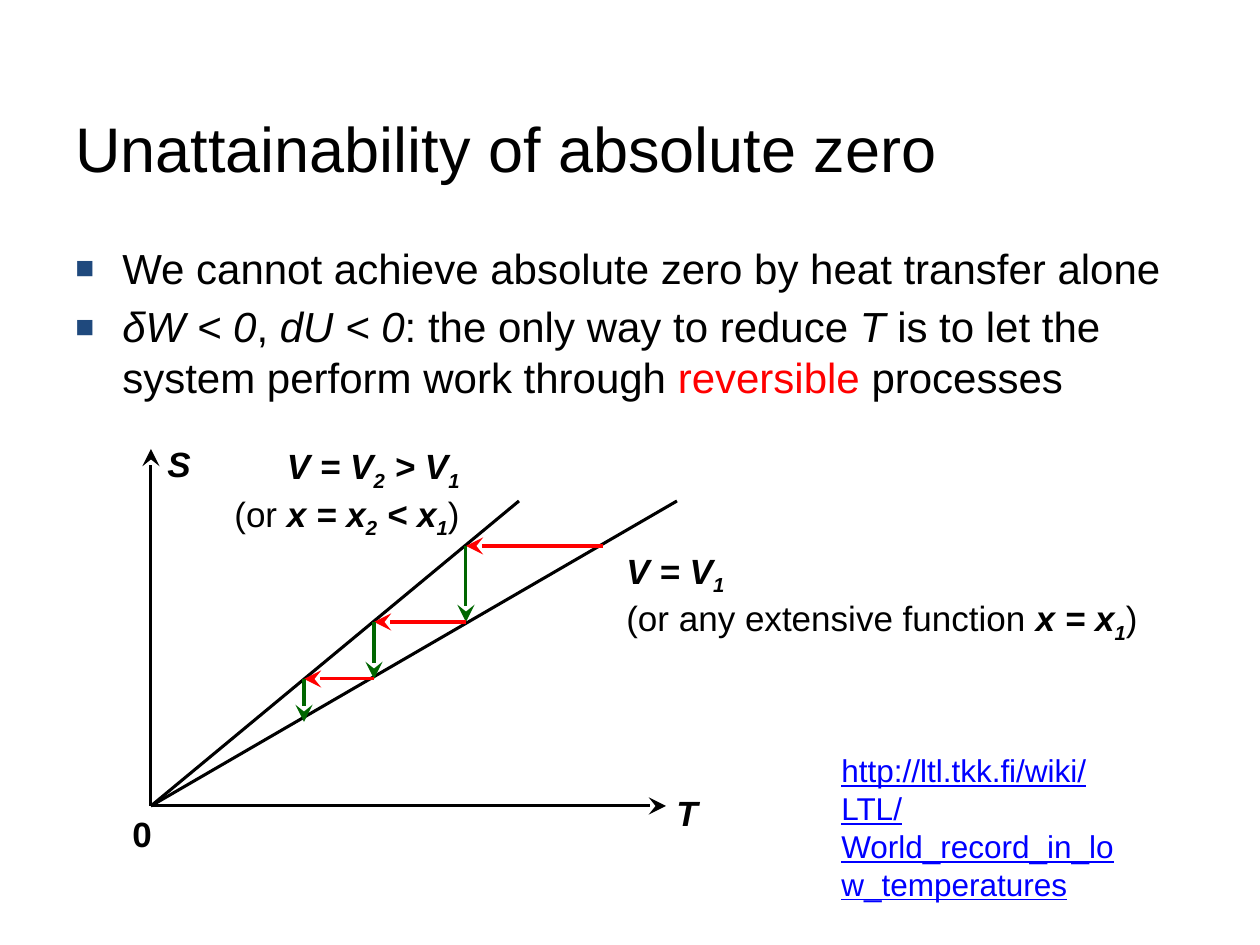
from itertools import pairwise
from lxml.etree import SubElement
from pptx import Presentation
from pptx.dml.color import RGBColor
from pptx.enum.shapes import MSO_CONNECTOR
from pptx.enum.text import MSO_ANCHOR, PP_ALIGN
from pptx.oxml.ns import qn
from pptx.util import Emu, Pt

COLORS = {"black": "000000", "red": "FF0000", "green": "006600", "blue": "0000FF", "bullet": "1F497D"}
FONT = "Arial"
SCALE = 914400 / 126

TITLE = [[("Unattainability of absolute zero", "")]]
BULLETS = [
    [("We cannot achieve absolute zero by heat transfer alone", "")],
    [("δW < 0", "i"), (", ", ""), ("dU < 0", "i"), (": the only way to reduce ", ""), ("T", "i"),
     (" is to let the system perform work through ", ""), ("reversible", "r"), (" processes", "")],
]
LOWER_CURVE = [
    [("V = V", "bi"), ("1", "bis")],
    [("(or any extensive function ", ""), ("x = x", "bi"), ("1", "bis"), (")", "")],
]
UPPER_CURVE = [
    [("V = V", "bi"), ("2", "bis"), (" > V", "bi"), ("1", "bis")],
    [("(or ", ""), ("x = x", "bi"), ("2", "bis"), (" < x", "bi"), ("1", "bis"), (")", "")],
]
AXIS_LABELS = [
    ("S", "bi", (155, 436, 49, 55)),
    ("T", "bi", (664, 785, 47, 55)),
    ("0", "b", (120, 806, 45, 55)),
]
LINK = [[("http://ltl.tkk.fi/wiki/LTL/World_record_in_low_temperatures", "lu")]]

ORIGIN = (151, 806)
AXIS_ENDS = [(151, 449), (666, 806)]
CURVE_ENDS = [(519, 501), (677, 501)]
COOLING_STEPS = [(603, 546), (466, 546), (466, 622), (374, 622), (374, 679), (304, 679), (304, 722)]


def px(value):
    return Emu(round(value * SCALE))


def add_bullet(paragraph):
    properties = paragraph._p.get_or_add_pPr()
    properties.set("marL", str(px(47)))
    properties.set("indent", str(px(-47)))
    color = SubElement(properties, qn("a:buClr"))
    SubElement(color, qn("a:srgbClr"), val=COLORS["bullet"])
    SubElement(properties, qn("a:buSzPct"), val="75000")
    SubElement(properties, qn("a:buFont"), typeface=FONT)
    SubElement(properties, qn("a:buChar"), char="■")


def add_text(slide, box, paragraphs, size, align=PP_ALIGN.LEFT, anchor=MSO_ANCHOR.TOP, wrap=True, bullets=False):
    frame = slide.shapes.add_textbox(*map(px, box)).text_frame
    frame.word_wrap = wrap
    frame.vertical_anchor = anchor
    for index, runs in enumerate(paragraphs):
        paragraph = frame.add_paragraph() if index else frame.paragraphs[0]
        if bullets:
            add_bullet(paragraph)
            if index:
                paragraph.space_before = Pt(size * 0.2)
        paragraph.alignment = align
        for text, style in runs:
            run = paragraph.add_run()
            run.text = text
            font = run.font
            font.name = FONT
            font.size = Pt(size)
            font.bold = "b" in style
            font.italic = "i" in style
            font.underline = "u" in style
            color = "red" if "r" in style else "blue" if "l" in style else "black"
            font.color.rgb = RGBColor.from_string(COLORS[color])
            if "s" in style:
                font._element.set("baseline", "-25000")


def add_line(slide, start, end, color="black", arrow=False):
    connector = slide.shapes.add_connector(MSO_CONNECTOR.STRAIGHT, *map(px, start + end))
    connector.line.color.rgb = RGBColor.from_string(COLORS[color])
    connector.line.width = Pt(1.75)
    if arrow:
        SubElement(connector.line._get_or_add_ln(), qn("a:tailEnd"), type="stealth", w="lg", len="lg")
    SubElement(connector._element.spPr, qn("a:effectLst"))


def main():
    presentation = Presentation()
    presentation.slide_width = px(1260)
    presentation.slide_height = px(945)
    slide = presentation.slides.add_slide(presentation.slide_layouts[6])

    add_text(slide, (63, 63, 1134, 168), TITLE, 36, anchor=MSO_ANCHOR.MIDDLE)
    add_text(slide, (63, 236, 1134, 572), BULLETS, 24, bullets=True)
    for end in AXIS_ENDS:
        add_line(slide, ORIGIN, end, arrow=True)
    for end in CURVE_ENDS:
        add_line(slide, ORIGIN, end)
    for text, style, box in AXIS_LABELS:
        add_text(slide, box, [[(text, style)]], 20, wrap=False)
    add_text(slide, (614, 543, 542, 97), LOWER_CURVE, 20, wrap=False)
    add_text(slide, (199, 438, 273, 97), UPPER_CURVE, 20, align=PP_ALIGN.RIGHT)
    for index, (start, end) in enumerate(pairwise(COOLING_STEPS)):
        add_line(slide, start, end, ("red", "green")[index % 2], arrow=True)
    add_text(slide, (829, 745, 305, 127), LINK, 18)

    presentation.save("out.pptx")


if __name__ == "__main__":
    main()
